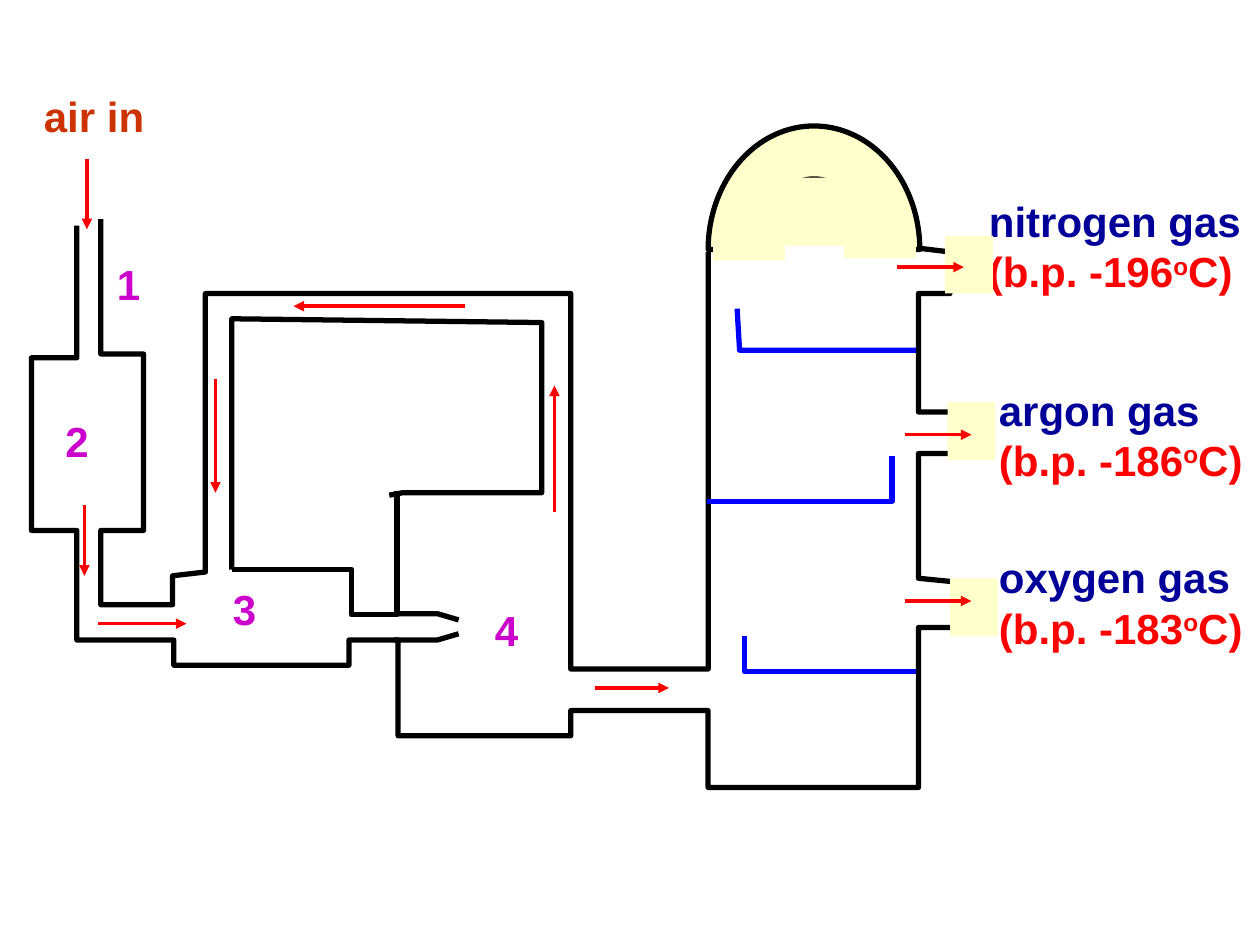
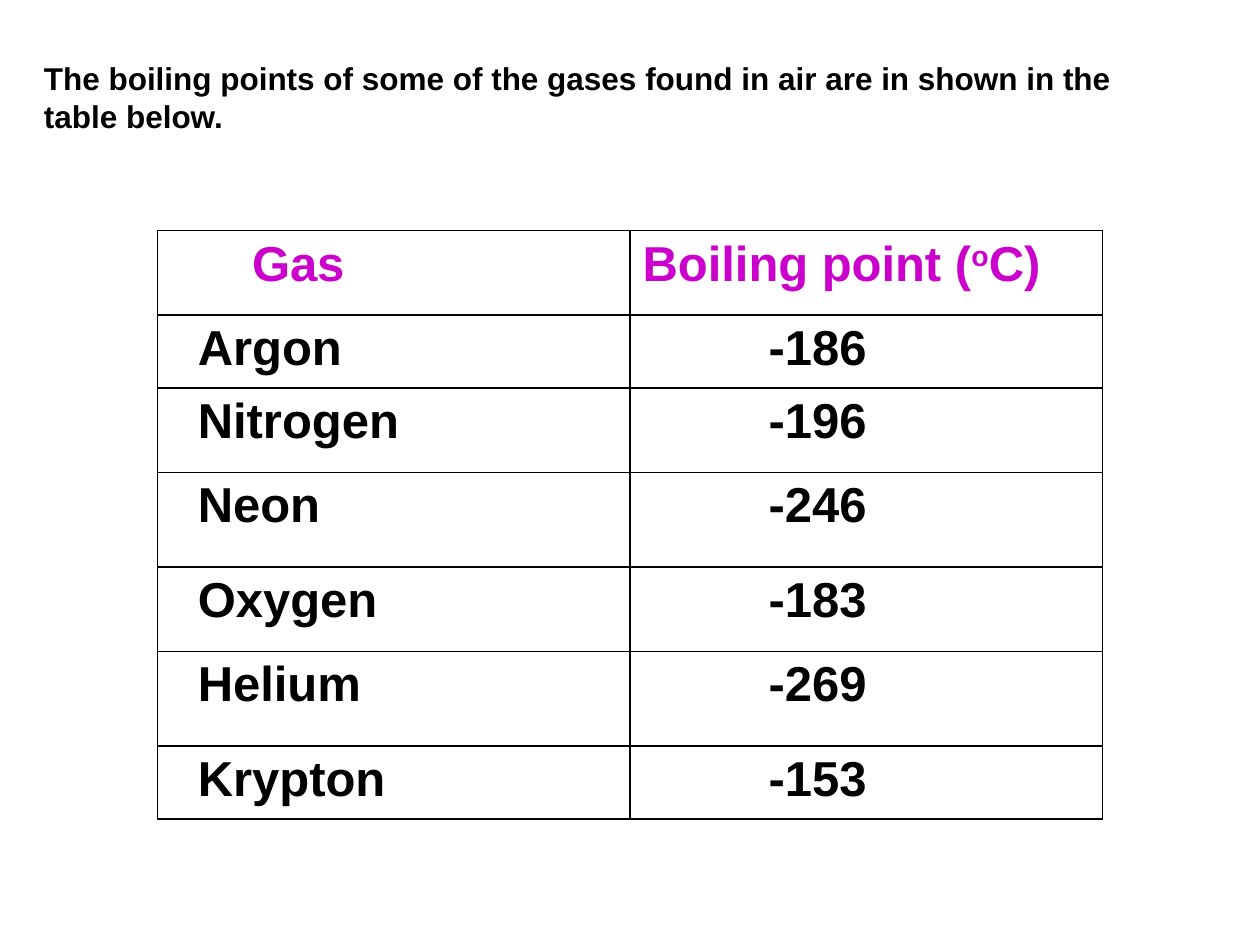
from lxml import etree
from pptx import Presentation
from pptx.dml.color import RGBColor
from pptx.enum.shapes import MSO_CONNECTOR, MSO_SHAPE
from pptx.oxml.ns import qn
from pptx.util import Inches, Pt

RECTANGLE = MSO_SHAPE.RECTANGLE
BLOCK_ARC = MSO_SHAPE.BLOCK_ARC
STRAIGHT = MSO_CONNECTOR.STRAIGHT

FONT = "Arial"
BLACK = "000000"
RED = "FF0000"
BLUE = "0000FF"
NAVY = "000099"
PURPLE = "CC00CC"
RUST = "CC3300"
CREAM = "FFFFCC"
SUPERSCRIPT = "30000"


def color(value):
    return RGBColor.from_string(value)


class Deck:
    def __init__(self):
        self.presentation = Presentation()
        self.presentation.slide_width = Inches(10)
        self.presentation.slide_height = Inches(7.5)
        self.slide = None

    def new_slide(self):
        blank = self.presentation.slide_layouts[6]
        self.slide = self.presentation.slides.add_slide(blank)

    def fill_text(self, frame, pieces, size, shade):
        if isinstance(pieces, str):
            pieces = [(pieces, shade, False)]
        paragraph = frame.paragraphs[0]
        paragraph.font.name = FONT
        paragraph.font.size = Pt(size)
        paragraph.font.bold = True
        paragraph.font.color.rgb = color(shade)
        for words, run_shade, raised in pieces:
            run = paragraph.add_run()
            run.text = words
            if run_shade != shade:
                run.font.color.rgb = color(run_shade)
            if raised:
                run._r.get_or_add_rPr().set("baseline", SUPERSCRIPT)

    def text(self, left, top, width, height, pieces, size=24, shade=BLACK):
        box = self.slide.shapes.add_textbox(
            Inches(left), Inches(top), Inches(width), Inches(height))
        box.text_frame.word_wrap = True
        self.fill_text(box.text_frame, pieces, size, shade)

    def outline(self, points, shade=BLACK):
        corners = [(Inches(x), Inches(y)) for x, y in points]
        builder = self.slide.shapes.build_freeform(*corners[0])
        builder.add_line_segments(corners[1:], close=False)
        wall = builder.convert_to_shape()
        wall.shadow.inherit = False
        wall.fill.background()
        wall.line.color.rgb = color(shade)
        wall.line.width = Pt(3)

    def shape(self, kind, left, top, width, height, fill, line=None):
        part = self.slide.shapes.add_shape(
            kind, Inches(left), Inches(top), Inches(width), Inches(height))
        part.shadow.inherit = False
        part.fill.solid()
        part.fill.fore_color.rgb = color(fill)
        if line:
            part.line.color.rgb = color(line)
            part.line.width = Pt(3)
        else:
            part.line.fill.background()

    def arrow(self, x1, y1, x2, y2):
        flow = self.slide.shapes.add_connector(
            STRAIGHT, Inches(x1), Inches(y1), Inches(x2), Inches(y2))
        flow.line.color.rgb = color(RED)
        flow.line.width = Pt(2)
        properties = flow._element.spPr
        etree.SubElement(properties.find(qn("a:ln")), qn("a:tailEnd"), type="triangle")
        etree.SubElement(properties, qn("a:effectLst"))

    def border(self, cell):
        properties = cell._tc.get_or_add_tcPr()
        for place, side in enumerate(("a:lnL", "a:lnR", "a:lnT", "a:lnB")):
            edge = etree.Element(qn(side), w=str(Pt(1)))
            fill = etree.SubElement(edge, qn("a:solidFill"))
            etree.SubElement(fill, qn("a:srgbClr"), val=BLACK)
            properties.insert(place, edge)

    def table(self, left, top, column_widths, row_heights, rows, indents):
        frame = self.slide.shapes.add_table(
            len(rows), len(column_widths), Inches(left), Inches(top),
            Inches(sum(column_widths)), Inches(sum(row_heights)))
        grid = frame.table
        grid.first_row = False
        grid.horz_banding = False
        for column, width in zip(grid.columns, column_widths):
            column.width = Inches(width)
        for r, (height, row) in enumerate(zip(row_heights, rows)):
            grid.rows[r].height = Inches(height)
            shade = BLACK if r else PURPLE
            for c, pieces in enumerate(row):
                cell = grid.cell(r, c)
                cell.fill.background()
                cell.margin_left = Inches(indents[min(r, 1)][c])
                self.border(cell)
                self.fill_text(cell.text_frame, pieces, 28, shade)


def build_distillation(deck):
    deck.new_slide()
    deck.text(0.25, 0.67, 1.25, 0.6, "air in", shade=RUST)
    products = [
        ("nitrogen", -196, 7.75, 1.5, 2.25, 0.92),
        ("argon", -186, 7.83, 3, 2.17, 0.96),
        ("oxygen", -183, 7.83, 4.33, 2.25, 0.92),
    ]
    for gas, boiling_point, left, top, width, height in products:
        deck.text(left, top, width, height, [
            (f"{gas} gas ", NAVY, False),
            (f"(b.p. {boiling_point}", RED, False),
            ("o", RED, True),
            ("C)", RED, False),
        ], shade=RED)

    lower_wall = [
        (0.61, 1.79), (0.61, 2.84), (0.25, 2.84), (0.25, 4.21), (0.61, 4.21),
        (0.61, 5.08), (1.38, 5.08), (1.38, 5.28), (2.77, 5.28), (2.77, 5.08),
        (3.16, 5.08), (3.16, 5.84), (4.53, 5.84), (4.53, 5.64), (5.62, 5.64),
        (5.62, 6.25), (7.29, 6.25), (7.29, 4.98), (7.59, 4.98), (7.59, 4.62),
        (7.29, 4.59), (7.29, 3.6), (7.57, 3.6), (7.57, 3.27), (7.29, 3.27),
        (7.29, 2.33), (7.54, 2.33), (7.54, 2), (7.29, 1.97),
    ]
    upper_wall = [
        (0.8, 1.74), (0.8, 2.81), (1.14, 2.81), (1.14, 4.21), (0.8, 4.21),
        (0.8, 4.8), (1.37, 4.8), (1.37, 4.57), (1.63, 4.54), (1.63, 2.33),
        (4.53, 2.33), (4.53, 5.31), (5.62, 5.31), (5.62, 2),
    ]
    return_pipe = [(1.84, 4.52), (1.84, 2.53), (4.3, 2.56), (4.3, 3.91),
                   (3.2, 3.91), (3.09, 3.93)]
    chamber_wall = [(1.84, 4.52), (2.79, 4.52), (2.79, 4.88), (3.15, 4.88), (3.15, 3.9)]
    for wall in (lower_wall, upper_wall, return_pipe, chamber_wall):
        deck.outline(wall)

    trays = [
        [(5.85, 2.45), (5.87, 2.78), (7.27, 2.78)],
        [(5.61, 3.98), (7.08, 3.98), (7.08, 3.62)],
        [(5.91, 5.05), (5.91, 5.33), (7.27, 5.33)],
    ]
    for tray in trays:
        deck.outline(tray, BLUE)

    deck.shape(BLOCK_ARC, 5.62, 1, 1.68, 1.96, CREAM, BLACK)
    dome_fillers = [(5.66, 1.84, 0.57, 0.23), (6.7, 1.92, 0.57, 0.13), (5.98, 1.41, 1, 0.54)]
    outlets = [(left, top, 0.38, 0.46)
               for left, top in ((7.5, 1.87), (7.52, 3.19), (7.54, 4.59))]
    for patch in dome_fillers + outlets:
        deck.shape(RECTANGLE, *patch, CREAM)

    flows = [
        (0.69, 1.26, 0.69, 1.82), (0.67, 4.01, 0.67, 4.57), (0.78, 4.95, 1.48, 4.95),
        (4.4, 4.06, 4.4, 3.06), (3.69, 2.43, 2.33, 2.43), (1.71, 3.01, 1.71, 3.91),
        (7.12, 2.12, 7.65, 2.12), (7.18, 3.45, 7.71, 3.45), (7.18, 4.77, 7.71, 4.77),
        (4.72, 5.46, 5.31, 5.46),
    ]
    for flow in flows:
        deck.arrow(*flow)

    deck.outline([(3.15, 4.87), (3.47, 4.87), (3.64, 4.92)])
    deck.outline([(3.13, 5.08), (3.47, 5.08), (3.64, 5.03)])

    stages = [(0.83, 2, 0.42, 0.5), (0.42, 3.25, 0.67, 0.6),
              (1.75, 4.58, 0.67, 0.6), (3.83, 4.75, 0.67, 0.6)]
    for number, place in enumerate(stages, 1):
        deck.text(*place, str(number), shade=PURPLE)


def build_boiling_points(deck):
    deck.new_slide()
    deck.text(0.25, 0.42, 8.92, 1.03,
              "The boiling points of some of the gases found in air are in shown "
              "in the table below.", size=18)
    heading = [("Boiling point (", PURPLE, False), ("o", PURPLE, True), ("C)", PURPLE, False)]
    rows = [
        ("Gas", heading),
        ("Argon", "-186"),
        ("Nitrogen", "-196"),
        ("Neon", "-246"),
        ("Oxygen", "-183"),
        ("Helium", "-269"),
        ("Krypton", "-153"),
    ]
    deck.table(1.25, 1.83, [3.75, 3.75], [0.67, 0.58, 0.67, 0.75, 0.67, 0.75, 0.58],
               rows, indents=[(0.75, 0.1), (0.32, 1.1)])


def main():
    deck = Deck()
    build_distillation(deck)
    build_boiling_points(deck)
    deck.presentation.save("out.pptx")


if __name__ == "__main__":
    main()
